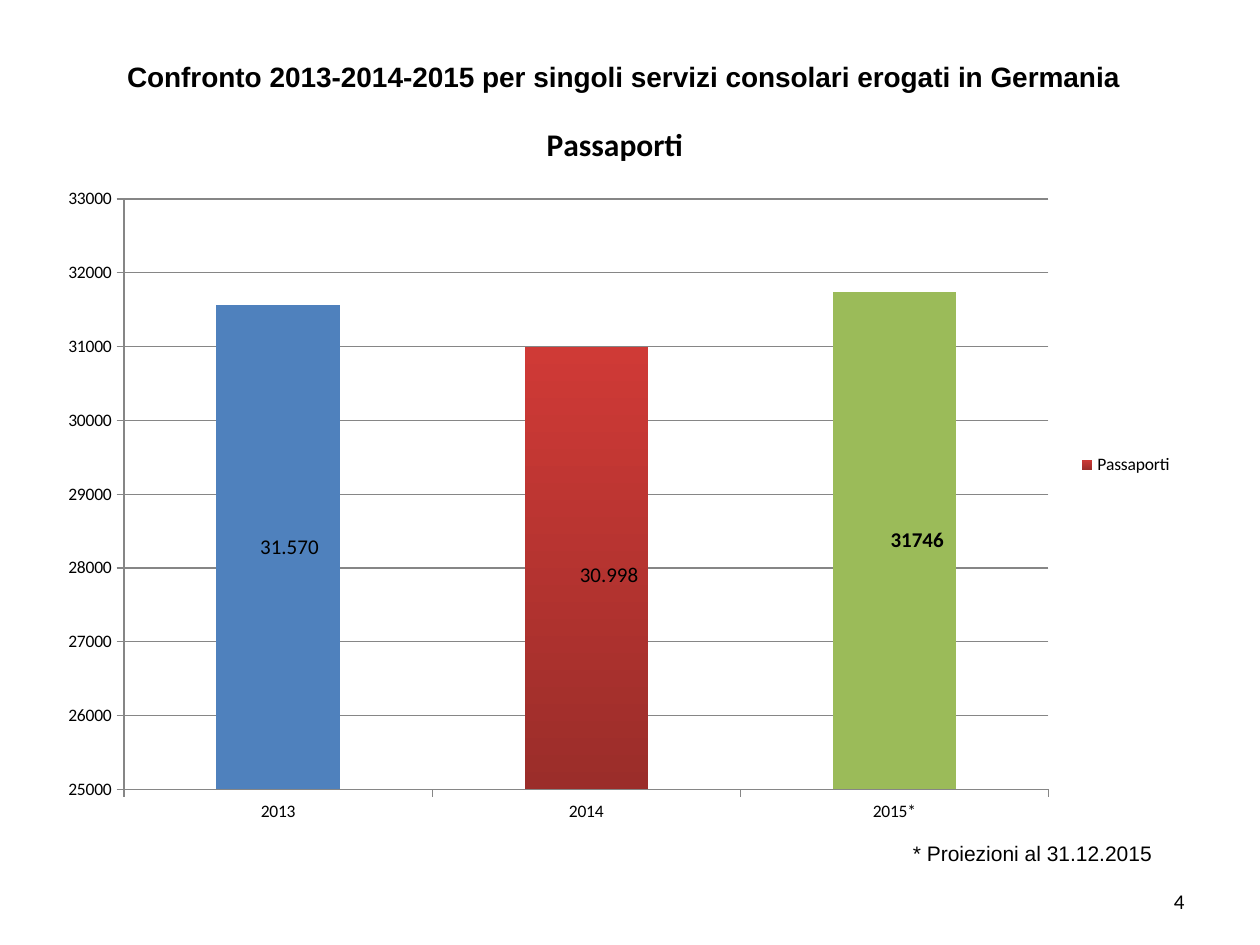
from lxml import etree
from pptx import Presentation
from pptx.chart.data import CategoryChartData
from pptx.dml.color import RGBColor
from pptx.enum.chart import XL_CHART_TYPE as ChartType
from pptx.enum.chart import XL_LABEL_POSITION as LabelPosition
from pptx.enum.chart import XL_LEGEND_POSITION as LegendPosition
from pptx.enum.chart import XL_TICK_MARK as TickMark
from pptx.enum.text import MSO_ANCHOR as Anchor
from pptx.enum.text import PP_ALIGN as Align
from pptx.oxml.ns import qn
from pptx.util import Cm, Pt

COLORS = {
    "text": "000000",
    "grid": "868686",
    "blue": "4F81BD",
    "green": "9BBB59",
    "red_top": "CF3A36",
    "red_bottom": "9B2D2A",
}
PASSPORTS = {"2013": 31570, "2014": 30998, "2015*": 31746}
POINT_FILLS = {0: "blue", 2: "green"}
LABEL_TEXTS = {0: "31.570", 1: "30.998"}
LABEL_OFFSETS = [(0.01, 0), (0.02, 0.01), (0.02, 0)]


def color(name):
    return RGBColor.from_string(COLORS[name])


def style_font(font, size, name="Calibri", bold=False):
    font.size, font.name, font.bold = Pt(size), name, bold
    font.color.rgb = color("text")


def add_text(slide, box, text, size, align, name="Arial", bold=False, anchor=Anchor.TOP):
    shape = slide.shapes.add_textbox(*(Cm(length) for length in box))
    frame = shape.text_frame
    frame.word_wrap = True
    frame.vertical_anchor = anchor
    paragraph = frame.paragraphs[0]
    paragraph.text = text
    paragraph.alignment = align
    style_font(paragraph.font, size, name, bold)


def add_layout(parent, position, **values):
    """Place a chart part by hand, in fractions of the chart."""
    for old in parent.findall(qn("c:layout")):
        parent.remove(old)
    layout = etree.Element(qn("c:layout"))
    manual = etree.SubElement(layout, qn("c:manualLayout"))
    for tag, value in values.items():
        etree.SubElement(manual, qn(f"c:{tag}")).set("val", str(value))
    parent.insert(position, layout)


def style_axis(axis):
    axis.major_tick_mark = TickMark.OUTSIDE
    axis.minor_tick_mark = TickMark.NONE
    style_font(axis.tick_labels.font, 10)
    axis.format.line.color.rgb = color("grid")
    axis.format.line.width = Pt(0.75)


def style_columns(series):
    series.invert_if_negative = False
    fill = series.format.fill
    fill.gradient()
    fill.gradient_angle = 270
    for stop, name in zip(fill.gradient_stops, ("red_top", "red_bottom")):
        stop.color.rgb = color(name)
    for index, name in POINT_FILLS.items():
        point_fill = series.points[index].format.fill
        point_fill.solid()
        point_fill.fore_color.rgb = color(name)


def add_labels(chart, series):
    for index in range(len(PASSPORTS)):
        label = series.points[index].data_label
        if index in LABEL_TEXTS:
            paragraph = label.text_frame.paragraphs[0]
            run = paragraph.add_run()
            run.text = LABEL_TEXTS[index]
            style_font(run.font, 12)
        else:
            style_font(label.font, 12, bold=True)
        label.position = LabelPosition.CENTER
    for element, (x, y) in zip(chart.element.xpath(".//c:dLbl"), LABEL_OFFSETS):
        add_layout(element, 1, x=x, y=y)


def add_passport_chart(slide):
    data = CategoryChartData()
    data.categories = list(PASSPORTS)
    data.add_series("Passaporti", list(PASSPORTS.values()))
    chart = slide.shapes.add_chart(
        ChartType.COLUMN_STACKED, Cm(0.89), Cm(1.93), Cm(23.01), Cm(14.88), data
    ).chart
    style_font(chart.font, 10)

    chart.has_title = True
    title = chart.chart_title.text_frame.paragraphs[0]
    run = title.add_run()
    run.text = "Passaporti"
    style_font(run.font, 18, bold=True)

    chart.has_legend = True
    chart.legend.position = LegendPosition.RIGHT
    chart.legend.include_in_layout = False
    style_font(chart.legend.font, 10)

    plot = chart.plots[0]
    plot.gap_width, plot.overlap = 150, 100
    plot.vary_by_categories = False
    style_axis(chart.category_axis)
    value_axis = chart.value_axis
    style_axis(value_axis)
    value_axis.minimum_scale, value_axis.maximum_scale = 25000, 33000
    value_axis.major_unit = 1000
    value_axis.has_major_gridlines = True
    gridline = value_axis.major_gridlines.format.line
    gridline.color.rgb = color("grid")
    gridline.width = Pt(0.75)

    style_columns(plot.series[0])
    add_labels(chart, plot.series[0])
    add_layout(
        chart.element.xpath(".//c:plotArea")[0], 0,
        layoutTarget="inner", xMode="edge", yMode="edge", x=0.07, y=0.14, w=0.81, h=0.8,
    )


def main():
    presentation = Presentation()
    presentation.slide_width, presentation.slide_height = Cm(25.4), Cm(19.05)
    slide = presentation.slides.add_slide(presentation.slide_layouts[6])
    add_text(slide, (18.21, 17.65, 5.92, 1.02), "4", 12, Align.RIGHT,
             name="Calibri", anchor=Anchor.MIDDLE)
    add_text(slide, (0.18, 1.07, 24.79, 0.94),
             "Confronto 2013-2014-2015 per singoli servizi consolari erogati in Germania",
             16, Align.CENTER, bold=True)
    add_text(slide, (18.11, 16.81, 5.41, 0.76), "* Proiezioni al 31.12.2015", 12, Align.CENTER)
    add_passport_chart(slide)
    presentation.save("out.pptx")


if __name__ == "__main__":
    main()
